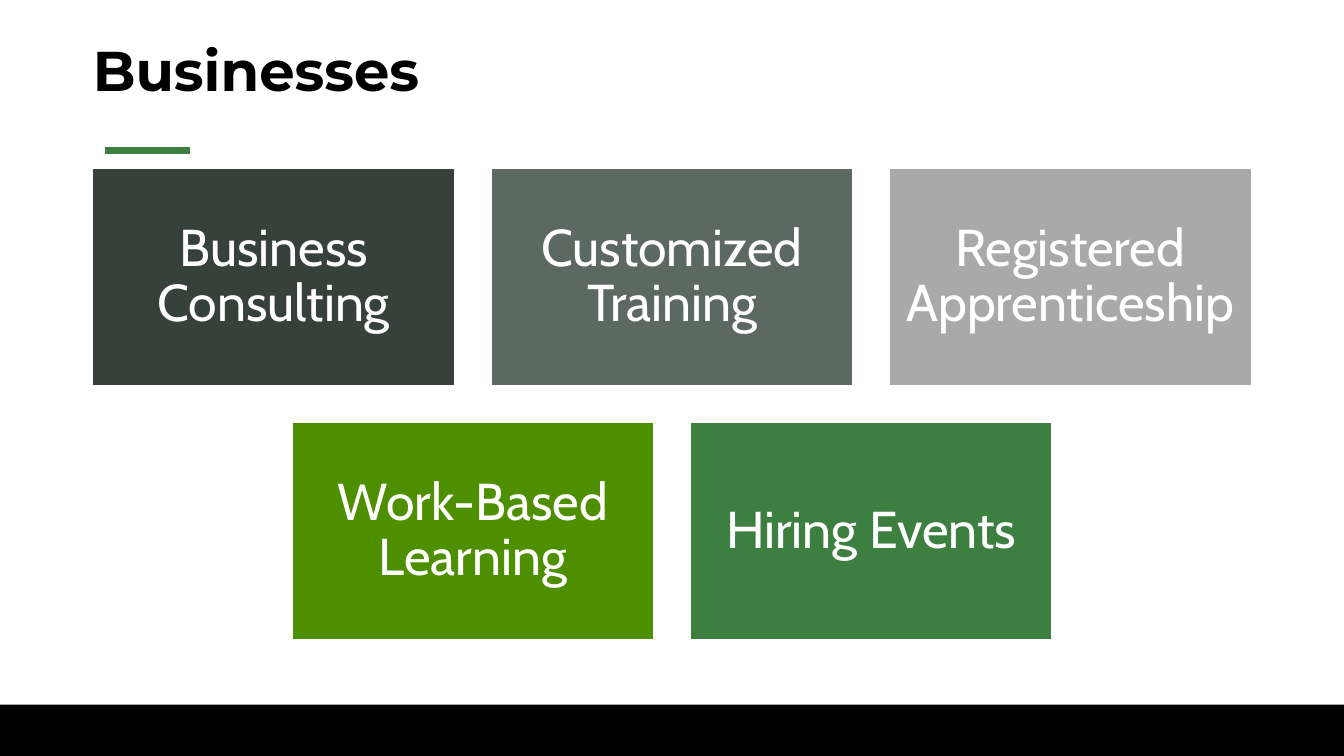
from lxml.etree import SubElement
from pptx import Presentation
from pptx.dml.color import RGBColor
from pptx.enum.shapes import MSO_CONNECTOR, MSO_SHAPE
from pptx.enum.text import MSO_ANCHOR, PP_ALIGN
from pptx.oxml.ns import qn
from pptx.util import Inches, Pt

COLOURS = {
    "black": "000000",
    "white": "FFFFFF",
    "charcoal": "37413C",
    "slate": "5C6862",
    "silver": "A9A9A9",
    "lime": "4E8F00",
    "green": "3D7E41",
}
SERVICE_ROWS = [
    [
        ("Business Consulting", "charcoal"),
        ("Customized Training", "slate"),
        ("Registered Apprenticeship", "silver"),
    ],
    [("Work-Based Learning", "lime"), ("Hiring Events", "green")],
]
PAGE_WIDTH, PAGE_HEIGHT = 13.33, 7.5
CARD_WIDTH, CARD_HEIGHT, CARD_GAP = 3.59, 2.16, 0.36
CARDS_TOP = 1.67


def colour(name):
    """Return the named colour."""
    return RGBColor.from_string(COLOURS[name])


def write_text(shape, text, *, font, size, fill, bold=False,
               align=PP_ALIGN.LEFT, inset=0):
    """Put one formatted, vertically centred paragraph in a shape."""
    frame = shape.text_frame
    frame.word_wrap = True
    frame.vertical_anchor = MSO_ANCHOR.MIDDLE
    frame.margin_left = frame.margin_right = Inches(inset)
    frame.margin_top = frame.margin_bottom = Inches(inset)
    para = frame.paragraphs[0]
    para.alignment = align
    para.line_spacing = 0.9
    para.space_before = Pt(0)
    span = para.add_run()
    span.text = text
    span.font.name = font
    span.font.size = Pt(size)
    span.font.bold = bold
    span.font.color.rgb = colour(fill)


def add_rectangle(page, left, top, width, height, fill, outline=None):
    """Add a filled rectangle with an optional thin outline."""
    box = page.shapes.add_shape(
        MSO_SHAPE.RECTANGLE,
        Inches(left), Inches(top), Inches(width), Inches(height))
    box.shadow.inherit = False
    box.fill.solid()
    box.fill.fore_color.rgb = colour(fill)
    if outline:
        box.line.color.rgb = colour(outline)
        box.line.width = Pt(1)
    else:
        box.line.fill.background()
    return box


def add_accent(page, left, right, top):
    """Add the short thick rule below the title."""
    rule = page.shapes.add_connector(
        MSO_CONNECTOR.STRAIGHT,
        Inches(left), Inches(top), Inches(right), Inches(top))
    rule.line.color.rgb = colour("green")
    rule.line.width = Pt(5)
    SubElement(rule.element.spPr, qn("a:effectLst"))


def add_title(page, text):
    """Place and fill the title placeholder."""
    title = page.shapes.title
    title.left, title.top = Inches(0.92), Inches(0)
    title.width, title.height = Inches(11.5), Inches(1.45)
    write_text(title, text, font="Montserrat", size=40, fill="black", bold=True)


def add_service_cards(page):
    """Lay out the service cards in rows centred on the page."""
    for row, services in enumerate(SERVICE_ROWS):
        count = len(services)
        row_width = count * CARD_WIDTH + (count - 1) * CARD_GAP
        row_left = (PAGE_WIDTH - row_width) / 2
        top = CARDS_TOP + row * (CARD_HEIGHT + CARD_GAP)
        for column, (service, fill) in enumerate(services):
            left = row_left + column * (CARD_WIDTH + CARD_GAP)
            card = add_rectangle(
                page, left, top, CARD_WIDTH, CARD_HEIGHT, fill, outline="white")
            write_text(card, service, font="Cabin", size=37, fill="white",
                       align=PP_ALIGN.CENTER, inset=0.15)


def main():
    """Build the slide and save it."""
    deck = Presentation()
    deck.slide_width, deck.slide_height = Inches(PAGE_WIDTH), Inches(PAGE_HEIGHT)
    page = deck.slides.add_slide(deck.slide_layouts[5])
    page.background.fill.solid()
    page.background.fill.fore_color.rgb = colour("white")
    add_rectangle(page, 0, 6.99, PAGE_WIDTH, 0.51, "black")
    add_accent(page, 1.04, 1.88, 1.49)
    add_title(page, "Businesses")
    add_service_cards(page)
    deck.save("out.pptx")


if __name__ == "__main__":
    main()
